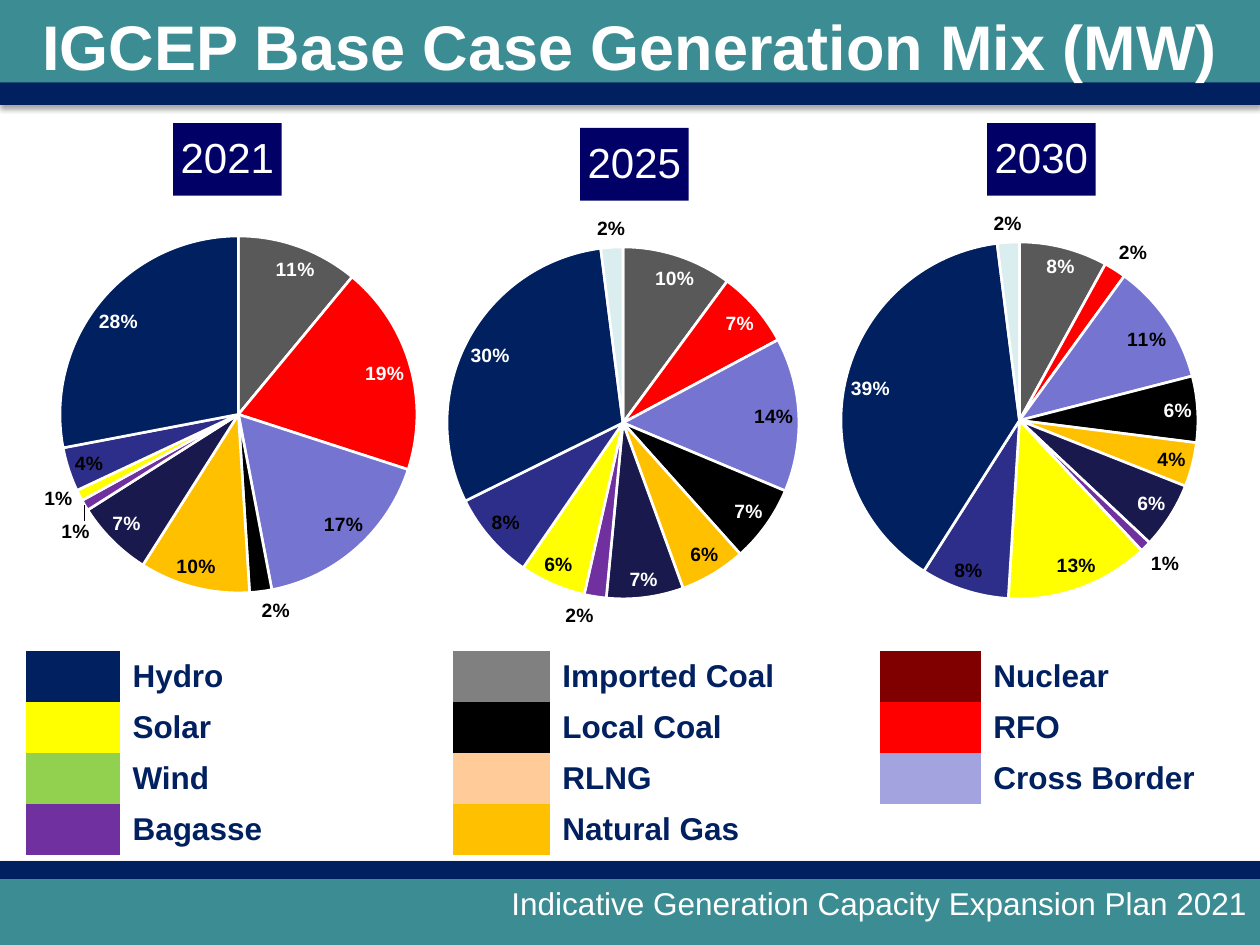
import dataclasses

import pptx
import pptx.chart.data
import pptx.dml.color
import pptx.enum.chart
import pptx.enum.shapes
import pptx.enum.text
import pptx.oxml
import pptx.oxml.ns
import pptx.util

EMU_PER_PX = 914400 / 126
PX_WIDTH, PX_HEIGHT = 1260, 945
NO_GRID_STYLE = "{2D5ABB26-0587-4C30-8999-92F81FD0307C}"
ALIGN = pptx.enum.text.PP_ALIGN


@dataclasses.dataclass(frozen=True)
class Theme:
    font: str = "Arial"
    teal: str = "3C8C93"
    navy: str = "002060"
    white: str = "FFFFFF"
    black: str = "000000"
    year_fill: str = "000066"
    title_size: int = 36
    year_size: int = 24
    body_size: int = 18
    label_size: int = 11
    slices: tuple = ("595959", "FF0000", "7575D1", "000000", "FFC000", "19194D",
                     "7030A0", "FFFF00", "2D2D8A", "002060", "DAEDEF")
    dark_slices: tuple = (0, 1, 3, 5, 9)


THEME = Theme()

# Year, chart box, pie box inside the chart, slice values
PIES = [
    ("2021", (-165, 105, 776, 535), (225, 131, 357, 357),
     (11, 19, 17, 2, 10, 7, 1, 1, 4, 28, 0)),
    ("2025", (242, 110, 776, 535), (205, 137, 352, 352),
     (10, 7, 14, 7, 6, 7, 2, 6, 8, 30, 2)),
    ("2030", (649, 105, 776, 535), (192, 137, 357, 357),
     (8, 2, 11, 6, 4, 6, 1, 13, 8, 39, 2)),
]

# Each legend column lists its fuels from top to bottom
LEGEND = [
    [("Hydro", "002060"), ("Solar", "FFFF00"), ("Wind", "92D050"), ("Bagasse", "7030A0")],
    [("Imported Coal", "808080"), ("Local Coal", "000000"), ("RLNG", "FFCC99"),
     ("Natural Gas", "FFC000")],
    [("Nuclear", "800000"), ("RFO", "FF0000"), ("Cross Border", "A3A3E0")],
]
LEGEND_WIDTHS = (94, 333, 97, 330, 101, 253)


def px(length):
    return pptx.util.Emu(round(length * EMU_PER_PX))


def rgb(value):
    return pptx.dml.color.RGBColor.from_string(value)


def set_font(font, size, color, bold=False):
    font.name = THEME.font
    font.size = pptx.util.Pt(size)
    font.bold = bold
    font.color.rgb = rgb(color)


def put_text(frame, text, *, size, color, bold=False, align=ALIGN.LEFT):
    paragraph = frame.paragraphs[0]
    paragraph.alignment = align
    run = paragraph.add_run()
    run.text = text
    set_font(run.font, size, color, bold)


def style_band(band, box, angle, insets):
    """Place a teal band with a navy edge and a soft shadow."""
    band.left, band.top, band.width, band.height = map(px, box)
    band.line.fill.background()
    namespace = pptx.oxml.ns.nsdecls("a")
    stops = "".join(f'<a:gs pos="{at}000"><a:srgbClr val="{color}"/></a:gs>'
                    for at, color in ((78, THEME.teal), (79, THEME.navy), (100, THEME.navy)))
    gradient = pptx.oxml.parse_xml(
        f'<a:gradFill {namespace} rotWithShape="1"><a:gsLst>{stops}</a:gsLst>'
        f'<a:lin ang="{angle * 60000}" scaled="0"/></a:gradFill>')
    shadow = pptx.oxml.parse_xml(
        f'<a:effectLst {namespace}><a:outerShdw blurRad="39370" dist="22860" dir="5400000" '
        f'rotWithShape="0"><a:srgbClr val="{THEME.black}"><a:alpha val="35000"/></a:srgbClr>'
        '</a:outerShdw></a:effectLst>')
    properties = band._element.spPr
    properties.find(pptx.oxml.ns.qn("a:ln")).addprevious(gradient)
    properties.append(shadow)

    frame = band.text_frame
    frame.word_wrap = True
    frame.auto_size = pptx.enum.text.MSO_AUTO_SIZE.NONE
    frame.vertical_anchor = pptx.enum.text.MSO_ANCHOR.MIDDLE
    (frame.margin_left, frame.margin_top,
     frame.margin_right, frame.margin_bottom) = map(px, insets)
    return frame


def add_header(slide, box):
    frame = style_band(slide.shapes.title, box, 90, (13, 2, 13, 16))
    put_text(frame, "IGCEP Base Case Generation Mix (MW)", size=THEME.title_size,
             color=THEME.white, bold=True, align=ALIGN.CENTER)


def add_footer(slide, box):
    band = slide.shapes.add_shape(pptx.enum.shapes.MSO_SHAPE.RECTANGLE, *map(px, box))
    frame = style_band(band, box, 270, (13, 0, 13, 0))
    put_text(frame, "Indicative Generation Capacity Expansion Plan 2021",
             size=THEME.body_size, color=THEME.white, align=ALIGN.RIGHT)


def chart_layout(chart_box, **places):
    """Build a manual layout from px measured inside the chart."""
    width, height = chart_box[2:]
    target = '<c:layoutTarget val="inner"/>' if "w" in places else ""
    modes = '<c:xMode val="edge"/><c:yMode val="edge"/>'
    values = "".join(f'<c:{key} val="{value / (width if key in "xw" else height):.4f}"/>'
                     for key, value in places.items())
    return pptx.oxml.parse_xml(
        f'<c:layout {pptx.oxml.ns.nsdecls("c")}><c:manualLayout>{target}{modes}{values}'
        '</c:manualLayout></c:layout>')


def replace_layout(parent, layout, index):
    for old in parent.findall(pptx.oxml.ns.qn("c:layout")):
        parent.remove(old)
    parent.insert(index, layout)


def add_pie(slide, box, year, pie_box, shares):
    mix = pptx.chart.data.CategoryChartData()
    mix.categories = [str(number + 1) for number in range(len(shares))]
    mix.add_series("Series 1", shares)
    chart = slide.shapes.add_chart(
        pptx.enum.chart.XL_CHART_TYPE.PIE, *map(px, box), mix).chart
    chart.has_legend = False
    set_font(chart.font, 10, THEME.black)

    # Year label
    chart.has_title = True
    put_text(chart.chart_title.text_frame, year, size=THEME.year_size,
             color=THEME.white, align=ALIGN.CENTER)
    year_fill = chart.chart_title.format.fill
    year_fill.solid()
    year_fill.fore_color.rgb = rgb(THEME.year_fill)
    replace_layout(chart.chart_title._element, chart_layout(box, x=338, y=18), 1)

    # Pie position
    plot_area = chart._chartSpace.chart.plotArea
    replace_layout(plot_area, chart_layout(box, **dict(zip("xywh", pie_box))), 0)
    chart.plots[0].vary_by_categories = True

    # Percentages
    series = chart.plots[0].series[0]
    labels = series.data_labels
    labels.show_percentage = True
    labels.show_value = False
    labels.number_format = "0%"
    labels.number_format_is_linked = False
    labels.position = pptx.enum.chart.XL_LABEL_POSITION.BEST_FIT
    set_font(labels.font, THEME.label_size, THEME.black, True)

    # Slices, with white labels inside the dark ones
    for index, share in enumerate(shares):
        point = series.points[index]
        point.format.fill.solid()
        point.format.fill.fore_color.rgb = rgb(THEME.slices[index])
        point.format.line.color.rgb = rgb(THEME.white)
        point.format.line.width = pptx.util.Pt(1.5)
        inside_dark = index in THEME.dark_slices and share > 2
        if inside_dark or share == 0:
            set_font(point.data_label.font, THEME.label_size, THEME.white, True)
            point.data_label.position = pptx.enum.chart.XL_LABEL_POSITION.BEST_FIT
            label = series._element.xpath(f'c:dLbls/c:dLbl[c:idx/@val="{index}"]')[0]
            label.find(pptx.oxml.ns.qn("c:showVal")).set("val", "0")
            label.find(pptx.oxml.ns.qn("c:showPercent")).set("val", "1" if share else "0")


def add_legend(slide, box):
    row_count = max(map(len, LEGEND))
    table = slide.shapes.add_table(row_count, len(LEGEND_WIDTHS), *map(px, box)).table
    table.first_row = table.horz_banding = False
    table._tbl.tblPr.find(pptx.oxml.ns.qn("a:tableStyleId")).text = NO_GRID_STYLE
    for column, width in zip(table.columns, LEGEND_WIDTHS):
        column.width = px(width)
    for cell in table.iter_cells():
        cell.fill.background()
        cell.vertical_anchor = pptx.enum.text.MSO_ANCHOR.MIDDLE
    for group, fuels in enumerate(LEGEND):
        for row, (fuel, color) in enumerate(fuels):
            swatch = table.cell(row, 2 * group)
            swatch.fill.solid()
            swatch.fill.fore_color.rgb = rgb(color)
            put_text(table.cell(row, 2 * group + 1).text_frame, fuel,
                     size=THEME.body_size, color=THEME.navy, bold=True)


def main():
    deck = pptx.Presentation()
    deck.slide_width, deck.slide_height = px(PX_WIDTH), px(PX_HEIGHT)
    slide = deck.slides.add_slide(deck.slide_layouts[5])
    add_footer(slide, (0, 861, PX_WIDTH, 84))
    add_header(slide, (0, 0, PX_WIDTH, 105))
    add_legend(slide, (26, 651, sum(LEGEND_WIDTHS), 204))
    for year, box, pie_box, shares in PIES:
        add_pie(slide, box, year, pie_box, shares)
    deck.save("out.pptx")


if __name__ == "__main__":
    main()
